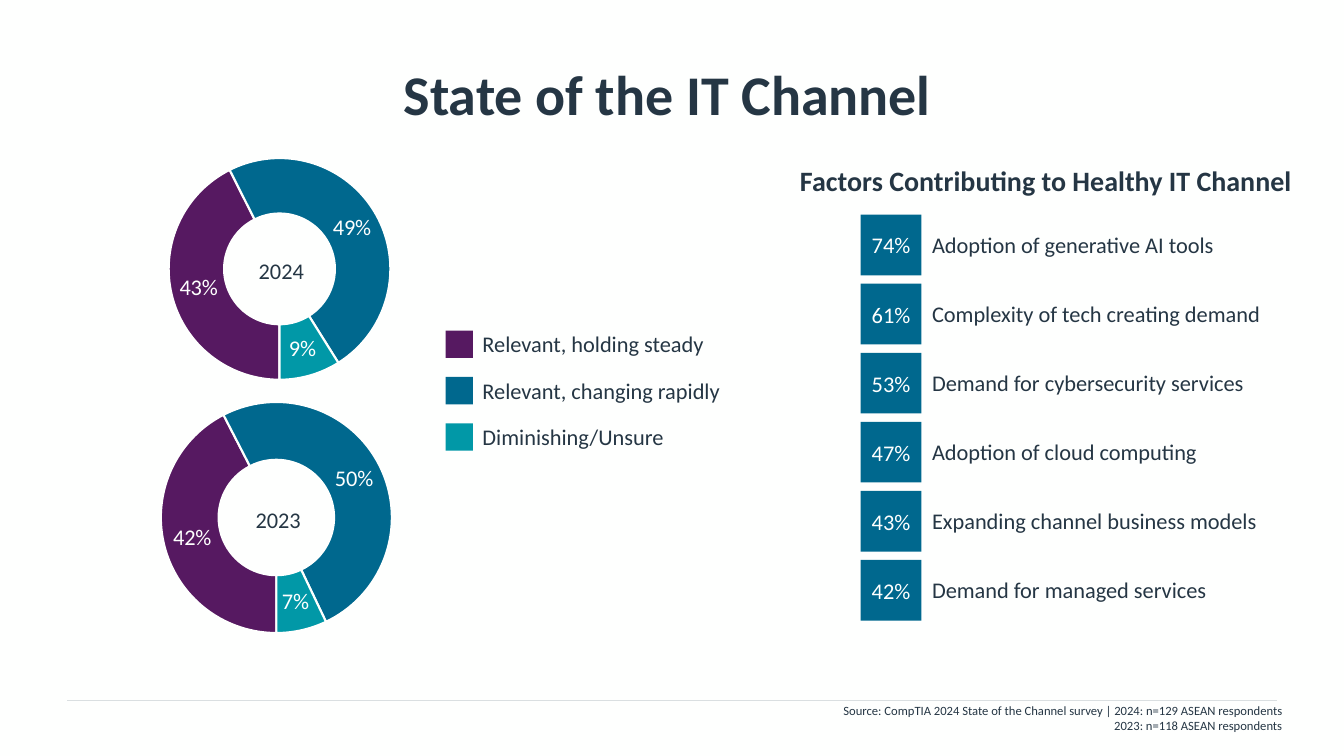
from lxml import etree
from pptx import Presentation
from pptx.chart.data import CategoryChartData
from pptx.dml.color import RGBColor
from pptx.enum.chart import XL_CHART_TYPE
from pptx.enum.shapes import MSO_CONNECTOR, MSO_SHAPE
from pptx.enum.text import MSO_ANCHOR, PP_ALIGN
from pptx.oxml import parse_xml
from pptx.oxml.ns import nsdecls, qn
from pptx.util import Cm, Pt

FONT = "Calibri"
INK = RGBColor(0x25, 0x36, 0x44)
WHITE = RGBColor(0xFE, 0xFF, 0xFE)
RULE = RGBColor(0xDA, 0xDF, 0xE1)
PURPLE = RGBColor(0x56, 0x19, 0x61)
BLUE = RGBColor(0x00, 0x68, 0x8E)
TEAL = RGBColor(0x01, 0x98, 0xA7)

LEGEND = [
    ("Relevant, holding steady", PURPLE),
    ("Relevant, changing rapidly", BLUE),
    ("Diminishing/Unsure", TEAL),
]
FACTORS = [
    ("74%", "Adoption of generative AI tools"),
    ("61%", "Complexity of tech creating demand"),
    ("53%", "Demand for cybersecurity services"),
    ("47%", "Adoption of cloud computing"),
    ("43%", "Expanding channel business models"),
    ("42%", "Demand for managed services"),
]


def set_font(font, size, color=INK, bold=False):
    font.name = FONT
    font.size = Pt(size)
    font.bold = bold
    font.color.rgb = color


def write(frame, text, size=16, color=INK, bold=False, align=PP_ALIGN.LEFT):
    frame.text = text
    frame.word_wrap = True
    for para in frame.paragraphs:
        para.alignment = align
        set_font(para.font, size, color, bold)


def add_text(page, place, text, **style):
    box = page.shapes.add_textbox(*map(Cm, place))
    write(box.text_frame, text, **style)
    return box


def add_square(page, left, top, side, color):
    square = page.shapes.add_shape(
        MSO_SHAPE.RECTANGLE, Cm(left), Cm(top), Cm(side), Cm(side))
    square.shadow.inherit = False
    square.fill.solid()
    square.fill.fore_color.rgb = color
    square.line.fill.background()
    return square


def add_title(page, text):
    title = page.shapes.title
    title.left, title.top, title.width, title.height = map(Cm, (1.7, 0.76, 30.48, 3.18))
    title.text_frame.margin_left = 0
    title.text_frame.vertical_anchor = MSO_ANCHOR.MIDDLE
    write(title.text_frame, text, size=40, bold=True, align=PP_ALIGN.CENTER)


def add_footer_rule(page):
    rule = page.shapes.add_connector(
        MSO_CONNECTOR.STRAIGHT, Cm(1.7), Cm(17.65), Cm(32.18), Cm(17.65))
    rule.line.color.rgb = RULE
    rule.line.width = Pt(0.5)
    etree.SubElement(rule._element.spPr, qn("a:effectLst"))


def set_plot_layout(chart, layout):
    plot_area = chart._chartSpace.chart.plotArea
    for old in plot_area.findall(qn("c:layout")):
        plot_area.remove(old)
    sizes = "".join(f'<c:{key} val="{value}"/>' for key, value in zip("xywh", layout))
    plot_area.insert(0, parse_xml(
        f'<c:layout {nsdecls("c")}><c:manualLayout><c:layoutTarget val="inner"/>'
        f'<c:xMode val="edge"/><c:yMode val="edge"/>{sizes}'
        "</c:manualLayout></c:layout>"))


def add_doughnut(page, place, values, layout):
    data = CategoryChartData(number_format="0%")
    data.categories = ["1", "2", "3"]
    data.add_series("Series 1", values)
    chart = page.shapes.add_chart(
        XL_CHART_TYPE.DOUGHNUT, *map(Cm, place), data).chart
    chart.has_legend = False
    chart.has_title = False
    set_font(chart.font, 11)
    set_plot_layout(chart, layout)

    plot = chart.plots[0]
    plot.vary_by_categories = True
    plot._element.find(qn("c:firstSliceAng")).set("val", "180")
    plot._element.find(qn("c:holeSize")).set("val", "50")
    series = plot.series[0]
    for index, (_, color) in enumerate(LEGEND):
        slice_format = series.points[index].format
        slice_format.fill.solid()
        slice_format.fill.fore_color.rgb = color
        slice_format.line.color.rgb = WHITE
        slice_format.line.width = Pt(1.5)
    labels = series.data_labels
    labels.show_value = True
    labels.number_format = "0%"
    labels.number_format_is_linked = False
    set_font(labels.font, 16, WHITE)


def add_year(page, place, year):
    box = add_text(page, place, year, align=PP_ALIGN.CENTER)
    box.text_frame.margin_left = 0
    box.text_frame.vertical_anchor = MSO_ANCHOR.MIDDLE


def add_legend(page):
    for index, (label, color) in enumerate(LEGEND):
        top = 8.33 + 1.17 * index
        add_square(page, 11.23, top, 0.69, color)
        add_text(page, (11.91, top - 0.13, 6.53, 0.94), label)


def add_factors(page):
    add_text(page, (19.91, 3.99, 13.08, 1.12),
             "Factors Contributing to Healthy IT Channel", size=20, bold=True)
    for index, (share, factor) in enumerate(FACTORS):
        top = 5.41 + 1.74 * index
        square = add_square(page, 21.69, top, 1.53, BLUE)
        write(square.text_frame, share, color=WHITE, align=PP_ALIGN.CENTER)
        square.text_frame.vertical_anchor = MSO_ANCHOR.MIDDLE
        square.text_frame.word_wrap = False
        add_text(page, (23.24, top + 0.28, 9.19, 0.94), factor)


def main():
    deck = Presentation()
    deck.slide_width, deck.slide_height = Cm(33.87), Cm(19.05)
    page = deck.slides.add_slide(deck.slide_layouts[5])
    page.background.fill.solid()
    page.background.fill.fore_color.rgb = WHITE

    add_footer_rule(page)
    add_title(page, "State of the IT Channel")
    add_doughnut(page, (3.91, 3.76, 6.43, 6.35), (0.43, 0.49, 0.09),
                 (0.053, 0.035, 0.869, 0.881))
    add_year(page, (5.49, 6.3, 3.45, 1.02), "2024")
    add_doughnut(page, (3.53, 9.91, 6.81, 6.35), (0.42, 0.5, 0.07),
                 (0.053, 0.035, 0.903, 0.917))
    add_year(page, (5.41, 11.91, 3.45, 2.34), "2023")
    add_legend(page)
    add_factors(page)
    add_text(page, (16.08, 17.58, 16.48, 1.02),
             "Source: CompTIA 2024 State of the Channel survey | 2024: n=129 ASEAN respondents\n"
             "2023: n=118 ASEAN respondents", size=9, align=PP_ALIGN.RIGHT)
    deck.save("out.pptx")


if __name__ == "__main__":
    main()
